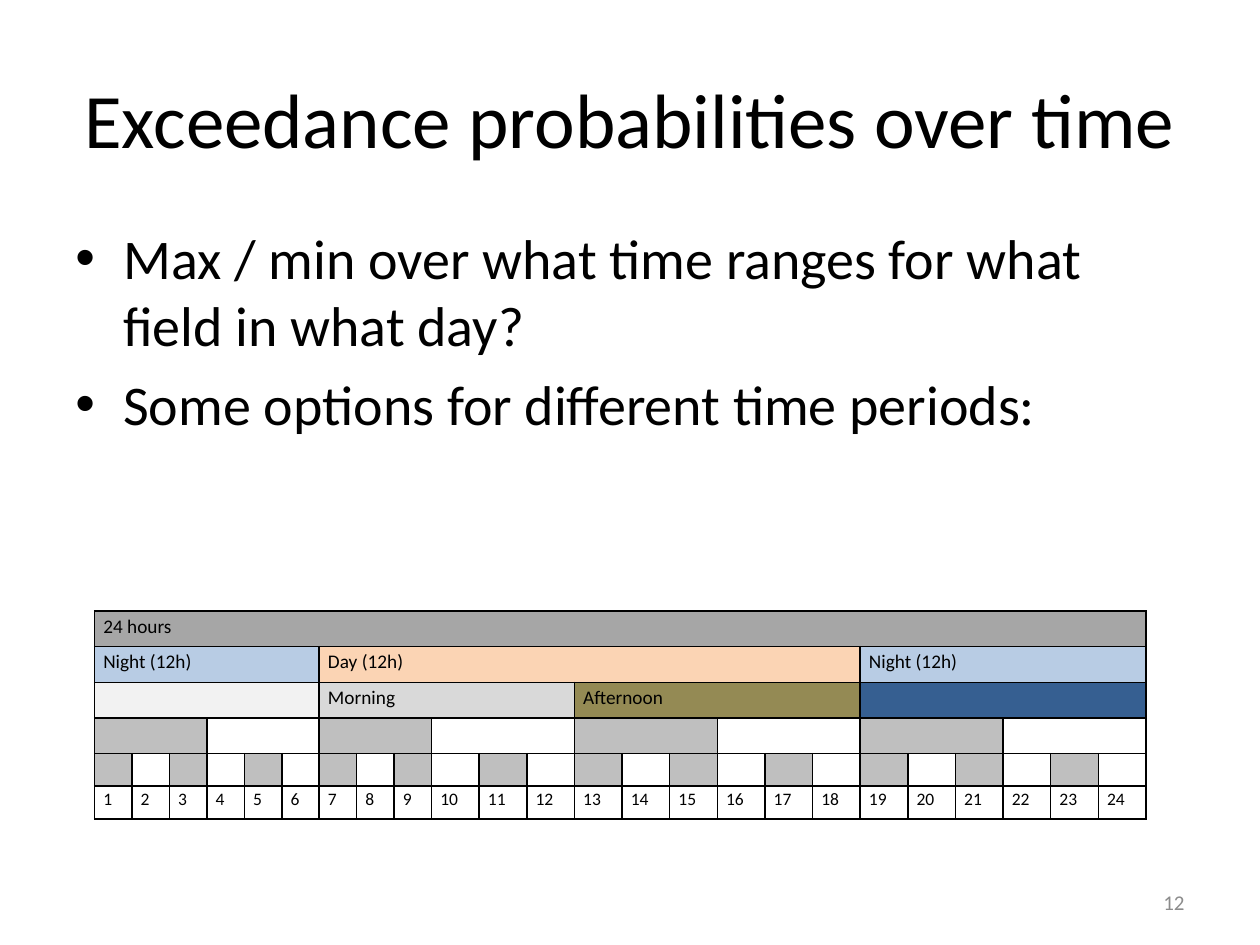
"""Build the slide on exceedance probabilities over time, with its table of time periods."""
from lxml import etree
from pptx import Presentation
from pptx import util as u
from pptx.dml.color import RGBColor
from pptx.enum import text as t
from pptx.oxml.ns import qn

COLORS = {
    "ink": "000000", "number": "8C8C8C", "whole": "A6A6A6", "night": "B8CCE4",
    "day": "FBD4B4", "early": "F2F2F2", "morning": "D9D9D9",
    "afternoon": "948A54", "evening": "365F91", "block": "BFBFBF",
}


def write(frame, lines, size, color="ink", align="l", anchor="t", bullet=None, spacing=None):
    frame.word_wrap = True
    frame.vertical_anchor = {"t": t.MSO_ANCHOR.TOP, "m": t.MSO_ANCHOR.MIDDLE}[anchor]
    for i, line in enumerate(lines):
        paragraph = frame.add_paragraph() if i else frame.paragraphs[0]
        paragraph.alignment = {"l": t.PP_ALIGN.LEFT, "c": t.PP_ALIGN.CENTER, "r": t.PP_ALIGN.RIGHT}[align]
        if spacing:
            paragraph.line_spacing = spacing
        if bullet:
            if i:
                paragraph.space_before = u.Pt(size * 0.2)
            properties = paragraph._p.get_or_add_pPr()
            properties.set("marL", str(u.Inches(0.38)))
            properties.set("indent", str(-u.Inches(0.38)))
            etree.SubElement(properties, qn("a:buFont"), typeface="Arial")
            etree.SubElement(properties, qn("a:buChar"), char=bullet)
        if not line:
            etree.SubElement(paragraph._p, qn("a:endParaRPr"), sz=str(size * 100))
            continue
        run = paragraph.add_run()
        run.text = line
        run.font.name = "Calibri"
        run.font.size = u.Pt(size)
        run.font.color.rgb = RGBColor.from_string(COLORS[color])


deck = Presentation()
deck.slide_width, deck.slide_height = u.Inches(10), u.Inches(7.5)
W, H = deck.slide_width, deck.slide_height
slide = deck.slides.add_slide(deck.slide_layouts[6])

passages = [
    ((0.05, 0.04, 0.9, 0.17), ["Exceedance probabilities over time"],
     dict(size=44, align="c", anchor="m")),
    ((0.05, 0.23, 0.9, 0.66),
     ["Max / min over what time ranges for what field in what day?",
      "Some options for different time periods:"],
     dict(size=32, bullet="•")),
    ((0.72, 0.93, 0.23, 0.05), ["12"],
     dict(size=12, color="number", align="r", anchor="m")),
]
for (x, y, w, h), lines, style in passages:
    area = slide.shapes.add_textbox(int(x * W), int(y * H), int(w * W), int(h * H))
    write(area.text_frame, lines, **style)

HOURS = 24
periods = [
    [("24 hours", 24, "whole")],
    [("Night (12h)", 6, "night"), ("Day (12h)", 12, "day"), ("Night (12h)", 6, "night")],
    [("", 6, "early"), ("Morning", 6, "morning"), ("Afternoon", 6, "afternoon"), ("", 6, "evening")],
    [("", 3, "block"), ("", 3, None)] * 4,
    [("", 1, "block"), ("", 1, None)] * 12,
    [(str(hour), 1, None) for hour in range(1, HOURS + 1)],
]
table_width, table_height = u.Inches(8.35), u.Inches(1.65)
schedule = slide.shapes.add_table(
    len(periods), HOURS, u.Inches(0.75), u.Inches(4.85), table_width, table_height).table
schedule.first_row = schedule.horz_banding = False

column_shares = [11] * 9 + [14] * 15
row_shares = [12] * 4 + [11] * 2
for column, share in zip(schedule.columns, column_shares):
    column.width = int(table_width * share / sum(column_shares))
for row, share in zip(schedule.rows, row_shares):
    row.height = int(table_height * share / sum(row_shares))

for cell in schedule.iter_cells():
    cell.margin_left = cell.margin_right = u.Inches(0.07)
    cell.margin_top = cell.margin_bottom = 0
    for side in ("lnL", "lnR", "lnT", "lnB"):
        border = etree.SubElement(cell._tc.get_or_add_tcPr(), qn(f"a:{side}"), w=str(u.Pt(1)))
        ink = etree.SubElement(border, qn("a:solidFill"))
        etree.SubElement(ink, qn("a:srgbClr"), val=COLORS["ink"])
    cell.fill.background()

for r, row_periods in enumerate(periods):
    start = 0
    for label, span, color in row_periods:
        period = schedule.cell(r, start)
        if span > 1:
            period.merge(schedule.cell(r, start + span - 1))
        if color:
            period.fill.solid()
            period.fill.fore_color.rgb = RGBColor.from_string(COLORS[color])
        write(period.text_frame, [label], size=11 if r < 4 else 10, spacing=1.15)
        start += span

deck.save("out.pptx")
